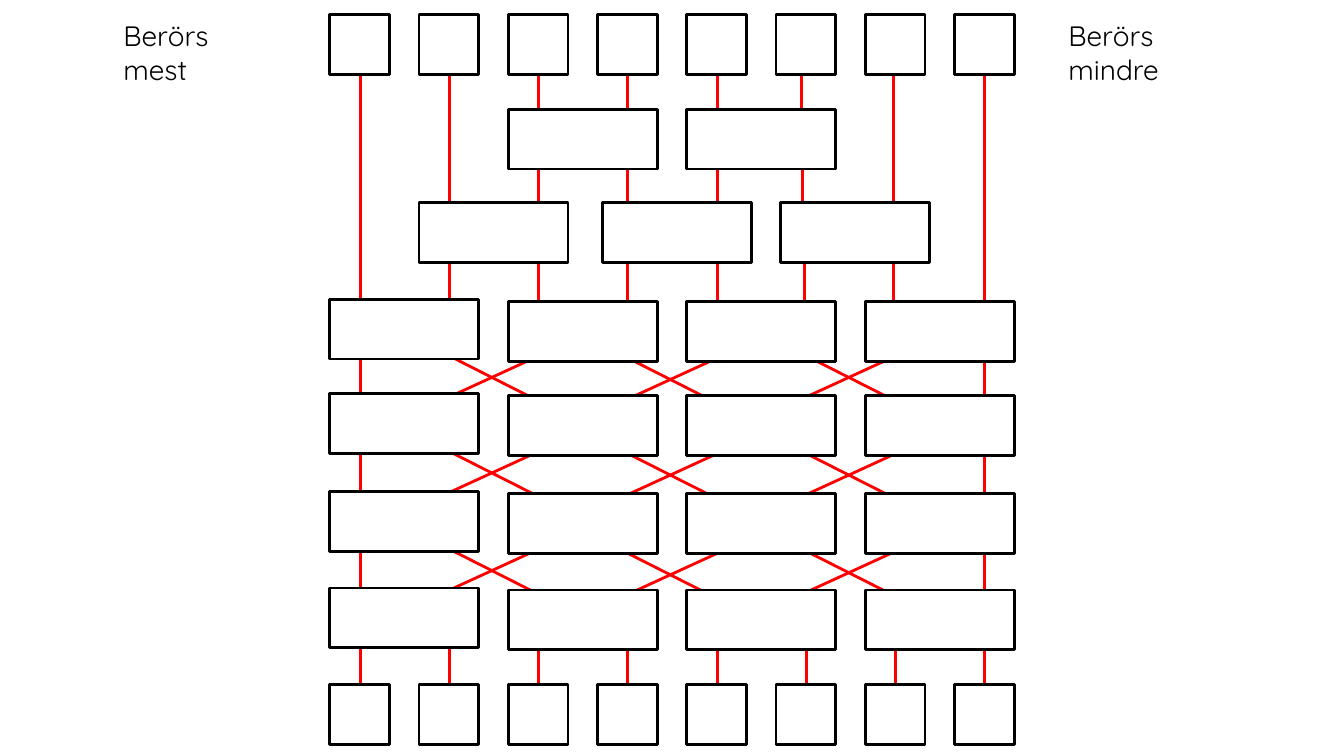
"""Builds a slide with an exchange network of boxes joined by red lines."""
from dataclasses import dataclass

from lxml.etree import SubElement
from pptx import Presentation
from pptx.dml.color import RGBColor
from pptx.enum.shapes import MSO_CONNECTOR as Connector
from pptx.enum.shapes import MSO_SHAPE as Preset
from pptx.enum.text import MSO_AUTO_SIZE as AutoSize
from pptx.oxml.ns import qn
from pptx.shapes.shapetree import GroupShapes, SlideShapes
from pptx.util import Emu, Pt

EMU_PER_PX = 9525
SLIDE_WIDTH, SLIDE_HEIGHT = 1280, 720
BLACK, WHITE, RED = "000000", "FFFFFF", "FF0000"
FONT = "Quicksand"
LINE_WIDTH = Pt(2)

LEFT, PITCH, LANES = 314, 85, 8
SQUARE = 57
WIDE = PITCH + SQUARE
LANE_LEFTS = [LEFT + PITCH * lane for lane in range(LANES)]
LANE_CENTRES = [left + 29 for left in LANE_LEFTS]
FIRST, SECOND, THIRD, FOURTH, FIFTH, SIXTH, SEVENTH, EIGHTH = LANE_CENTRES
SQUARE_TOPS = (652, 14)
PAIR_TOPS = (562, 470, 377, 287)
FIRST_PAIR_RISE = 2

STUB = 55
FALL, RISE = 43, 39


@dataclass(frozen=True)
class Label:
    """A caption beside the network."""

    text: str
    left: int
    width: int


@dataclass(frozen=True)
class Box:
    """A white box with a black outline."""

    left: int
    top: int
    width: int


@dataclass(frozen=True)
class Wire:
    """A straight red line between two points."""

    start_x: int
    start_y: int
    end_x: int
    end_y: int


@dataclass(frozen=True)
class StubRow:
    """A row of vertical lines of one length."""

    top: int
    centres: tuple[int, ...]
    length: int = STUB


LABELS = (Label("Berörs mest", 108, 164), Label("Berörs mindre", 1008, 189))
CROSSING_TOPS = ((523, 527, 525), (430, 432, 432), (339, 341, 339))
STUB_ROWS = (
    StubRow(57, (SECOND, 851), 152),
    StubRow(57, (FIRST, EIGHTH), 246),
    StubRow(147, (THIRD, FOURTH, FIFTH, 764)),
    StubRow(61, (THIRD, FOURTH, FIFTH, 763)),
    StubRow(608, tuple(LANE_CENTRES)),
    StubRow(246, (SECOND, THIRD, FOURTH, FIFTH, 766, 851)),
    StubRow(333, (FIRST, EIGHTH)),
    StubRow(422, (FIRST, EIGHTH)),
    StubRow(516, (FIRST, EIGHTH)),
)
UPPER_BOXES = (
    Box(399, 193, WIDE),
    Box(574, 193, WIDE),
    Box(743, 193, WIDE),
    Box(484, 104, WIDE),
    Box(654, 104, WIDE),
)


def px(length: int) -> Emu:
    """Turn pixels into EMU."""
    return Emu(length * EMU_PER_PX)


def colour(value: str) -> RGBColor:
    """Turn a hex string into a colour."""
    return RGBColor.from_string(value)


def network_wires() -> list[Wire]:
    """List the crossings and the vertical lines."""
    wires: list[Wire] = []
    for tops in CROSSING_TOPS:
        for start, end, top in zip(LANE_CENTRES[1::2], LANE_CENTRES[2::2], tops):
            wires.append(Wire(start, top, end, top + FALL))
            wires.append(Wire(start, top + RISE, end, top))
    for row in STUB_ROWS:
        for centre in row.centres:
            wires.append(Wire(centre, row.top, centre, row.top + row.length))
    return wires


def network_boxes() -> list[Box]:
    """List the squares, the paired boxes and the upper boxes."""
    boxes = [Box(left, top, SQUARE) for top in SQUARE_TOPS for left in LANE_LEFTS]
    for top in PAIR_TOPS:
        for left in LANE_LEFTS[::2]:
            rise = FIRST_PAIR_RISE if left == LEFT else 0
            boxes.append(Box(left, top - rise, WIDE))
    return boxes + list(UPPER_BOXES)


def draw_wire(shapes: GroupShapes, wire: Wire) -> None:
    """Draw one red line without a shadow."""
    connector = shapes.add_connector(
        Connector.STRAIGHT,
        px(wire.start_x), px(wire.start_y), px(wire.end_x), px(wire.end_y),
    )
    connector.line.color.rgb = colour(RED)
    connector.line.width = LINE_WIDTH
    SubElement(connector._element.spPr, qn("a:effectLst"))


def draw_box(shapes: GroupShapes, box: Box) -> None:
    """Draw one outlined box."""
    shape = shapes.add_shape(
        Preset.RECTANGLE, px(box.left), px(box.top), px(box.width), px(SQUARE)
    )
    shape.shadow.inherit = False
    shape.fill.solid()
    shape.fill.fore_color.rgb = colour(WHITE)
    shape.line.color.rgb = colour(BLACK)
    shape.line.width = LINE_WIDTH


def draw_label(shapes: SlideShapes, label: Label) -> None:
    """Draw one caption that wraps inside its width."""
    shape = shapes.add_textbox(px(label.left), px(13), px(label.width), px(42))
    frame = shape.text_frame
    frame.word_wrap = True
    frame.auto_size = AutoSize.SHAPE_TO_FIT_TEXT
    run = frame.paragraphs[0].add_run()
    run.text = label.text
    run.font.name = FONT
    run.font.size = Pt(20)
    run.font.color.rgb = colour(BLACK)


def main() -> None:
    """Build and save the slide."""
    presentation = Presentation()
    presentation.slide_width = px(SLIDE_WIDTH)
    presentation.slide_height = px(SLIDE_HEIGHT)
    slide = presentation.slides.add_slide(presentation.slide_layouts[6])
    network = slide.shapes.add_group_shape()
    for wire in network_wires():
        draw_wire(network.shapes, wire)
    for box in network_boxes():
        draw_box(network.shapes, box)
    for label in LABELS:
        draw_label(slide.shapes, label)
    presentation.save("out.pptx")


if __name__ == "__main__":
    main()
